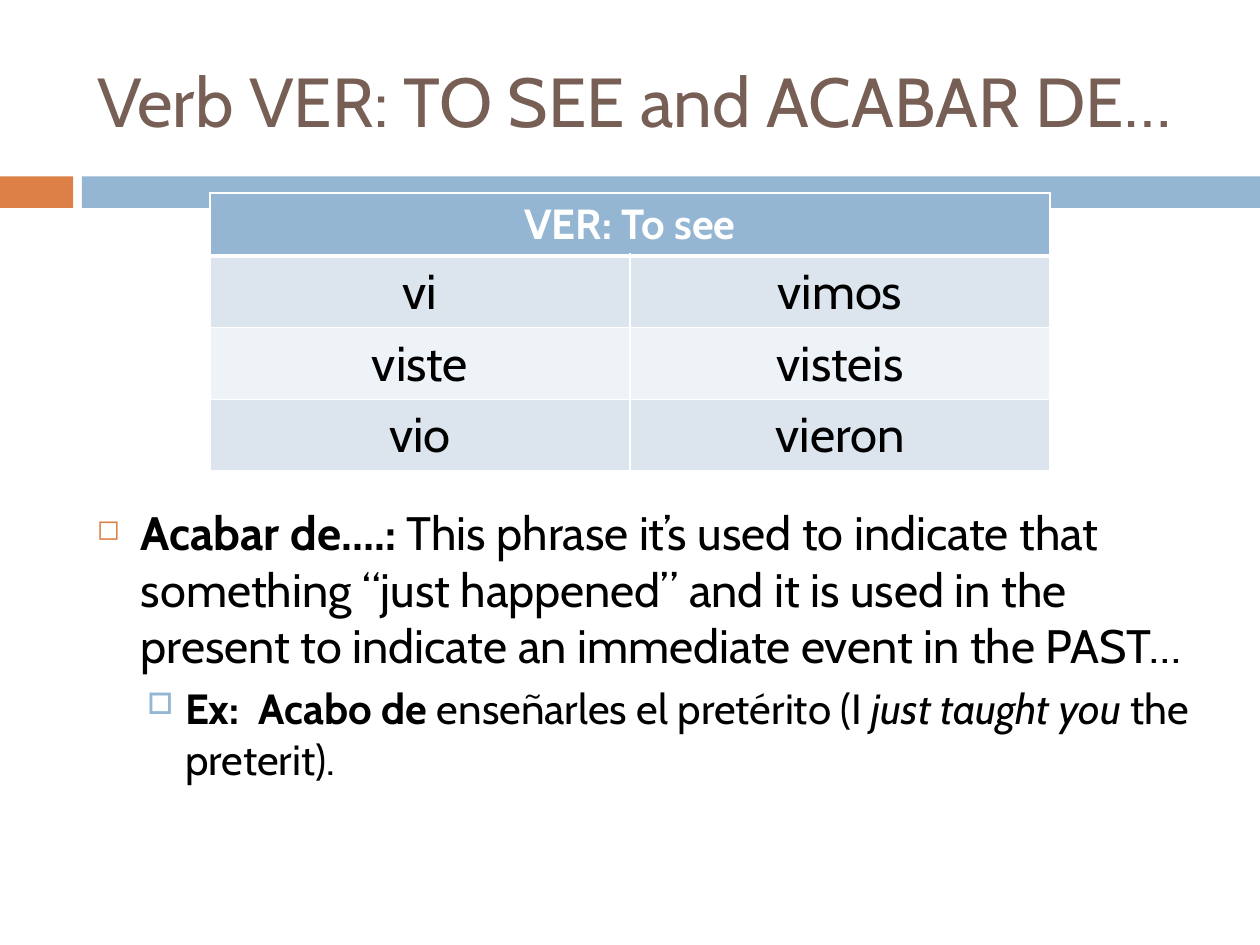
from dataclasses import dataclass

import lxml.etree
import pptx
import pptx.dml.color
import pptx.enum.shapes
import pptx.enum.text
import pptx.oxml.ns
import pptx.util

RGBColor = pptx.dml.color.RGBColor
Inches = pptx.util.Inches
Pt = pptx.util.Pt
qn = pptx.oxml.ns.qn
PP_ALIGN = pptx.enum.text.PP_ALIGN

BROWN = RGBColor(0x77, 0x5F, 0x55)
ORANGE = RGBColor(0xDD, 0x80, 0x47)
BLUE = RGBColor(0x94, 0xB6, 0xD2)
BAND_DARK = RGBColor(0xDC, 0xE5, 0xEE)
BAND_LIGHT = RGBColor(0xEE, 0xF3, 0xF7)
WHITE = RGBColor(0xFF, 0xFF, 0xFF)
BLACK = RGBColor(0, 0, 0)

FONT = "Cabin"
SLIDE_WIDTH, SLIDE_HEIGHT = 10, 7.5
MARGIN, CONTENT_WIDTH = 0.67, 8.92
BAND_TOP, BAND_HEIGHT = 1.4, 0.25
TABLE_TOP, TABLE_WIDTH = 1.53, SLIDE_WIDTH * 2 / 3
HEADER_HEIGHT, ROW_HEIGHT = 0.5, 0.57
EXPLANATION_TOP, EXPLANATION_BOTTOM = 3.95, 6.67

CONJUGATION = [("vi", "vimos"), ("viste", "visteis"), ("vio", "vieron")]


@dataclass
class Band:
    left: float
    right: float
    color: RGBColor


@dataclass
class Phrase:
    text: str
    bold: bool = False
    italic: bool = False


@dataclass
class Point:
    phrases: list[Phrase]
    size: float
    space_before: float
    indent: float
    hanging: float
    bullet: str
    bullet_color: RGBColor
    bullet_percent: int


BANDS = [Band(0, 0.58, ORANGE), Band(0.65, SLIDE_WIDTH, BLUE)]

POINTS = [
    Point(
        [
            Phrase("Acabar de….: ", bold=True),
            Phrase(
                "This phrase it’s used to indicate that something “just happened” "
                "and it is used in the present to indicate an immediate event in the PAST…"
            ),
        ],
        26.8, 0, 0.35, 0.35, "◻", ORANGE, 60,
    ),
    Point(
        [
            Phrase("Ex:  Acabo de ", bold=True),
            Phrase("enseñarles el pretérito (I "),
            Phrase("just taught you", italic=True),
            Phrase(" the preterit)."),
        ],
        24.1, 5.5, 0.7, 0.3, "□", BLUE, 70,
    ),
]


def style_font(font, size: float, color: RGBColor) -> None:
    font.name = FONT
    font.size = Pt(size)
    font.color.rgb = color


def draw_band(slide, band: Band) -> None:
    bar = slide.shapes.add_shape(
        pptx.enum.shapes.MSO_SHAPE.RECTANGLE,
        Inches(band.left), Inches(BAND_TOP),
        Inches(band.right - band.left), Inches(BAND_HEIGHT),
    )
    bar.shadow.inherit = False
    bar.fill.solid()
    bar.fill.fore_color.rgb = band.color
    bar.line.fill.background()


def draw_title(slide, text: str) -> None:
    title = slide.shapes.title
    title.left, title.top = Inches(MARGIN), Inches(0.25)
    title.width, title.height = Inches(CONTENT_WIDTH), Inches(1.08)
    frame = title.text_frame
    frame.text = text
    frame.auto_size = pptx.enum.text.MSO_AUTO_SIZE.NONE
    frame.vertical_anchor = pptx.enum.text.MSO_ANCHOR.MIDDLE
    frame.paragraphs[0].alignment = PP_ALIGN.LEFT
    style_font(frame.paragraphs[0].font, 39.6, BROWN)


def add_border(cell, side: str, width: float) -> None:
    properties = cell._tc.get_or_add_tcPr()
    border = lxml.etree.SubElement(properties, qn(f"a:ln{side}"), w=str(Pt(width)))
    fill = lxml.etree.SubElement(border, qn("a:solidFill"))
    lxml.etree.SubElement(fill, qn("a:srgbClr"), val=str(WHITE))


def style_cell(cell, row: int) -> None:
    for side in "LRTB":
        below_header = (row, side) in ((0, "B"), (1, "T"))
        add_border(cell, side, 3 if below_header else 1)
    cell.fill.solid()
    cell.fill.fore_color.rgb = BLUE if row == 0 else BAND_DARK if row % 2 else BAND_LIGHT
    paragraph = cell.text_frame.paragraphs[0]
    paragraph.alignment = PP_ALIGN.CENTER
    style_font(paragraph.font, 28 if row else 24, BLACK if row else WHITE)
    paragraph.font.bold = row == 0


def draw_conjugation(slide, heading: str, forms: list[tuple[str, str]]) -> None:
    table = slide.shapes.add_table(
        len(forms) + 1, 2,
        Inches((SLIDE_WIDTH - TABLE_WIDTH) / 2), Inches(TABLE_TOP),
        Inches(TABLE_WIDTH), Inches(HEADER_HEIGHT + ROW_HEIGHT * len(forms)),
    ).table
    for row, texts in enumerate([(heading, ""), *forms]):
        table.rows[row].height = Inches(ROW_HEIGHT if row else HEADER_HEIGHT)
        for column, text in enumerate(texts):
            cell = table.cell(row, column)
            cell.text = text
            style_cell(cell, row)
    table.cell(0, 0).merge(table.cell(0, 1))


def add_bullet(paragraph, point: Point) -> None:
    properties = paragraph._p.get_or_add_pPr()
    properties.set("marL", str(Inches(point.indent)))
    properties.set("indent", str(-Inches(point.hanging)))
    color = lxml.etree.SubElement(properties, qn("a:buClr"))
    lxml.etree.SubElement(color, qn("a:srgbClr"), val=str(point.bullet_color))
    lxml.etree.SubElement(properties, qn("a:buSzPct"), val=str(point.bullet_percent * 1000))
    lxml.etree.SubElement(properties, qn("a:buChar"), char=point.bullet)


def draw_explanation(slide, points: list[Point]) -> None:
    frame = slide.shapes.add_textbox(
        Inches(MARGIN), Inches(EXPLANATION_TOP),
        Inches(CONTENT_WIDTH), Inches(EXPLANATION_BOTTOM - EXPLANATION_TOP),
    ).text_frame
    frame.word_wrap = True
    for level, point in enumerate(points):
        paragraph = frame.add_paragraph() if level else frame.paragraphs[0]
        paragraph.level = level
        paragraph.space_before = Pt(point.space_before)
        add_bullet(paragraph, point)
        style_font(paragraph.font, point.size, BLACK)
        for phrase in point.phrases:
            run = paragraph.add_run()
            run.text = phrase.text
            run.font.bold = phrase.bold
            run.font.italic = phrase.italic


def main() -> None:
    deck = pptx.Presentation()
    deck.slide_width, deck.slide_height = Inches(SLIDE_WIDTH), Inches(SLIDE_HEIGHT)
    slide = deck.slides.add_slide(deck.slide_layouts.get_by_name("Title Only"))
    for band in BANDS:
        draw_band(slide, band)
    draw_title(slide, "Verb VER: TO SEE and ACABAR DE…")
    draw_explanation(slide, POINTS)
    draw_conjugation(slide, "VER: To see", CONJUGATION)
    deck.save("out.pptx")


if __name__ == "__main__":
    main()
